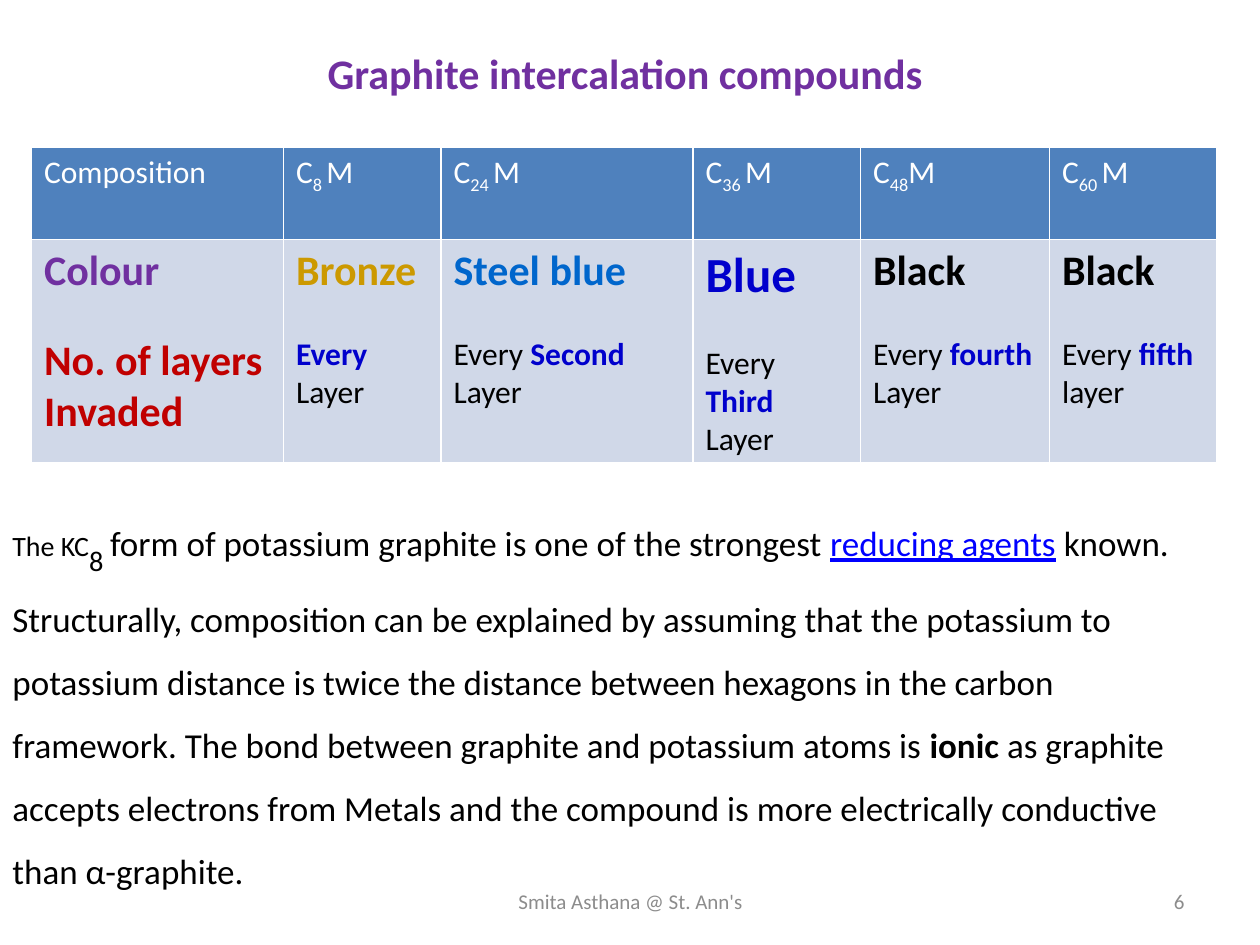
from dataclasses import dataclass

from lxml.etree import SubElement
from pptx import Presentation
from pptx.dml.color import RGBColor
from pptx.enum.text import MSO_ANCHOR as Anchor, PP_ALIGN as Align
from pptx.oxml.ns import qn
from pptx.util import Inches, Pt


@dataclass(frozen=True)
class Theme:
    font: str = "Calibri"
    black: str = "000000"
    white: str = "FFFFFF"
    purple: str = "7030A0"
    red: str = "C00000"
    bronze: str = "CC9900"
    steel: str = "0066CC"
    blue: str = "0000CC"
    link: str = "0000FF"
    grey: str = "8C8C8C"
    header_fill: str = "4F81BD"
    body_fill: str = "D0D8E8"
    title: int = 24
    large: int = 28
    text: int = 20
    table: int = 18
    lead: int = 16
    footer: int = 12
    gap: int = 22


THEME = Theme()

COMPOUNDS = [
    ("8 ", "Bronze", THEME.bronze, THEME.title, [["*Every"], ["Layer"]]),
    ("24 ", "Steel blue", THEME.steel, THEME.title, [["Every ", "*Second"], ["Layer"]]),
    ("36 ", "Blue", THEME.blue, THEME.large, [["Every"], ["*Third"], ["Layer"]]),
    ("48", "Black", THEME.black, THEME.title, [["Every ", "*fourth"], ["Layer"]]),
    ("60 ", "Black", THEME.black, THEME.title, [["Every ", "*fifth"], ["layer"]]),
]


def add_span(para, text, size, color=THEME.black, bold=False, underline=False, baseline=0):
    span = para.add_run()
    span.text = text
    font = span.font
    font.name, font.size, font.bold = THEME.font, Pt(size), bold
    font.color.rgb = RGBColor.from_string(color)
    if underline:
        font.underline = True
    if baseline:
        font._element.set("baseline", str(baseline * 1000))


def add_text_box(slide, box, anchor=Anchor.MIDDLE):
    frame = slide.shapes.add_textbox(*map(Inches, box)).text_frame
    frame.word_wrap = True
    frame.vertical_anchor = anchor
    return frame.paragraphs[0]


def place_title(slide, box):
    title = slide.shapes.title
    title.left, title.top, title.width, title.height = map(Inches, box)
    frame = title.text_frame
    frame.word_wrap = False
    frame.vertical_anchor = Anchor.TOP
    para = frame.paragraphs[0]
    para.alignment = Align.LEFT
    add_span(para, "Graphite intercalation compounds", THEME.title, THEME.purple, bold=True)


def style_cell(cell, fill):
    properties = cell._tc.get_or_add_tcPr()
    for side in ("lnL", "lnR", "lnT", "lnB"):
        line = SubElement(properties, qn(f"a:{side}"), w=str(Pt(1)))
        solid = SubElement(line, qn("a:solidFill"))
        SubElement(solid, qn("a:srgbClr"), val=THEME.white)
    cell.fill.solid()
    cell.fill.fore_color.rgb = RGBColor.from_string(fill)


def add_gap_para(frame, first):
    para = frame.add_paragraph()
    if first:
        para.space_before = Pt(THEME.gap)
    return para


def place_compound_table(slide, box):
    widths = [2, 1.25, 2, 1.33, 1.5, 1.33]
    heights = [0.73, 1.74]
    table = slide.shapes.add_table(len(heights), len(widths), *map(Inches, box)).table
    for column, width in zip(table.columns, widths):
        column.width = Inches(width)
    fills = (THEME.header_fill, THEME.body_fill)
    for row, height, fill in zip(table.rows, heights, fills):
        row.height = Inches(height)
        for cell in row.cells:
            style_cell(cell, fill)

    add_span(table.cell(0, 0).text_frame.paragraphs[0], "Composition", THEME.table, THEME.white)
    labels = table.cell(1, 0).text_frame
    add_span(labels.paragraphs[0], "Colour", THEME.title, THEME.purple, bold=True)
    for index, text in enumerate(["No. of layers", "Invaded"]):
        add_span(add_gap_para(labels, index == 0), text, THEME.title, THEME.red, bold=True)

    for column, (count, name, color, size, lines) in enumerate(COMPOUNDS, start=1):
        formula = table.cell(0, column).text_frame.paragraphs[0]
        for text, baseline in (("C", 0), (count, -25), ("M", 0)):
            add_span(formula, text, THEME.table, THEME.white, baseline=baseline)
        frame = table.cell(1, column).text_frame
        add_span(frame.paragraphs[0], name, size, color, bold=True)
        for index, line in enumerate(lines):
            para = add_gap_para(frame, index == 0)
            for text in line:
                strong = text.startswith("*")
                add_span(para, text.lstrip("*"), THEME.table,
                         THEME.blue if strong else THEME.black, bold=strong)


def place_explanation(slide, box):
    para = add_text_box(slide, box)
    para.line_spacing = 1.5
    add_span(para, "The KC", THEME.lead)
    add_span(para, "8 ", THEME.large, baseline=-30)
    add_span(para, "form of potassium graphite is one of the strongest ", THEME.text)
    add_span(para, "reducing agents", THEME.text, THEME.link, underline=True)
    add_span(para, " known. Structurally, composition can be explained by assuming that "
             "the potassium to potassium distance is twice the distance between hexagons "
             "in the carbon framework. The bond between graphite and potassium atoms is ",
             THEME.text)
    add_span(para, "ionic ", THEME.text, bold=True)
    add_span(para, "as graphite accepts electrons from Metals and the compound is more "
             "electrically conductive than α-graphite.", THEME.text)


def place_footer_text(slide, box, text, alignment):
    para = add_text_box(slide, box)
    para.alignment = alignment
    add_span(para, text, THEME.footer, THEME.grey)


def main():
    deck = Presentation()
    deck.slide_width, deck.slide_height = Inches(10), Inches(7.5)
    slide = deck.slides.add_slide(deck.slide_layouts[5])
    place_explanation(slide, (0, 3.75, 9.75, 3.33))
    place_compound_table(slide, (0.25, 1.17, 9.41, 2.47))
    place_title(slide, (2.5, 0.33, 5.05, 0.5))
    place_footer_text(slide, (7.17, 6.95, 2.33, 0.4), "6", Align.RIGHT)
    place_footer_text(slide, (3.42, 6.95, 3.17, 0.4), "Smita Asthana @ St. Ann's", Align.CENTER)
    deck.save("out.pptx")


if __name__ == "__main__":
    main()
